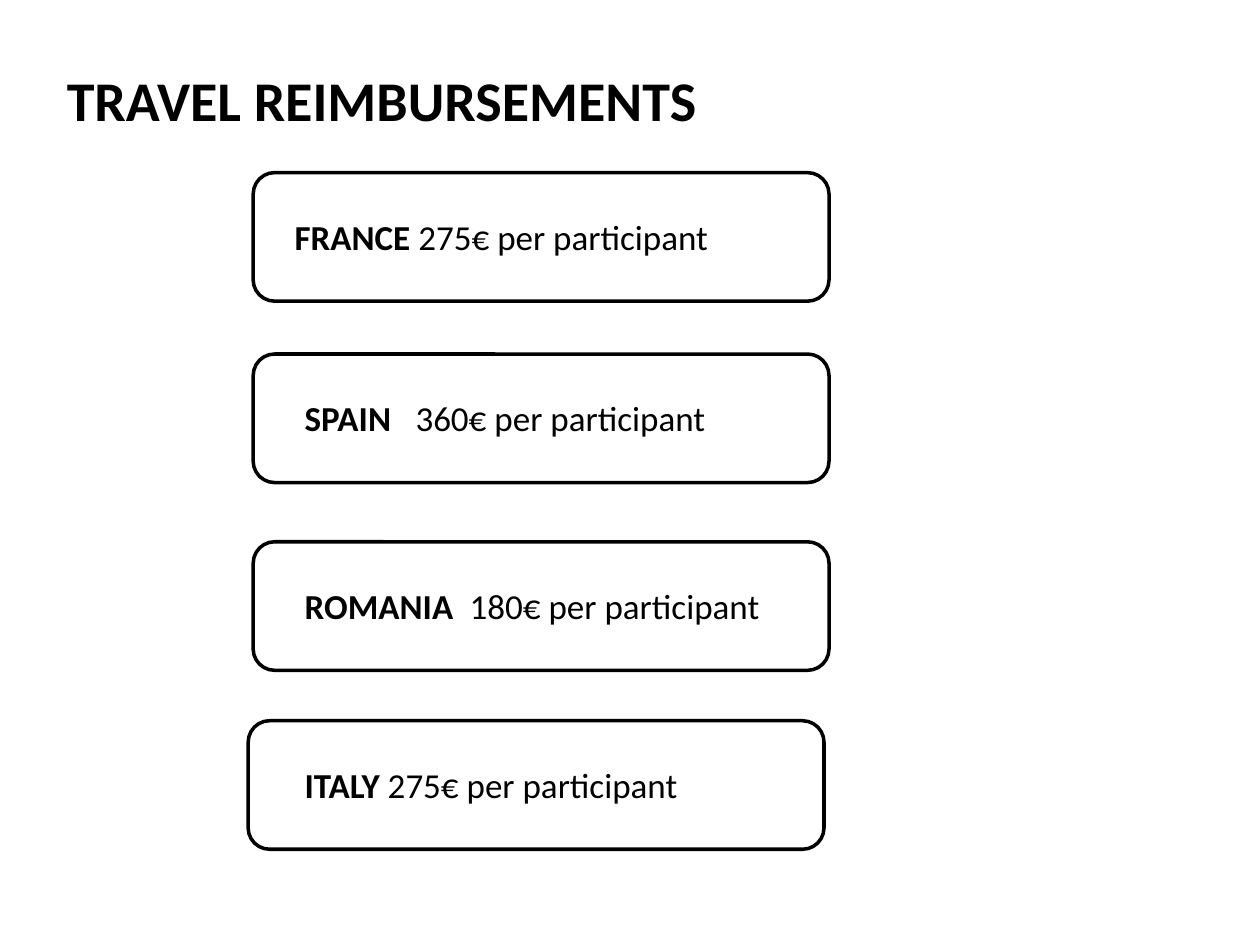
"""Build the travel reimbursements slide."""
from lxml import etree
from pptx import Presentation
from pptx.dml.color import RGBColor
from pptx.enum.shapes import MSO_SHAPE
from pptx.enum.text import MSO_ANCHOR, PP_ALIGN
from pptx.oxml.ns import qn
from pptx.util import Inches, Pt

ROUNDED = MSO_SHAPE.ROUNDED_RECTANGLE
MIDDLE = MSO_ANCHOR.MIDDLE
LEFT = PP_ALIGN.LEFT
COLORS = {"ink": "000000", "paper": "FFFFFF"}
INK = RGBColor.from_string(COLORS["ink"])
PAPER = RGBColor.from_string(COLORS["paper"])
CARD_W, CARD_H = 4.57, 1.02
TEXT_W, TEXT_H = 4, 0.44


def style(r, size, bold):
    r.font.name = "Calibri"
    r.font.size = Pt(size)
    r.font.bold = bold
    r.font.color.rgb = INK


prs = Presentation()
prs.slide_width, prs.slide_height = Inches(10), Inches(7.5)
s = prs.slides.add_slide(prs.slide_layouts[5])

title = s.shapes.title
title.left, title.top = Inches(0.43), Inches(0.44)
title.width, title.height = Inches(9.07), Inches(0.7)
tf = title.text_frame
tf.text = "TRAVEL REIMBURSEMENTS"
tf.vertical_anchor = MIDDLE
p = tf.paragraphs[0]
p.alignment = LEFT
style(p.runs[0], 32, True)

rows = [
    ("FRANCE", 275, 2.01, 1.37, 2.24, None),
    ("SPAIN", 360, 2.01, 2.81, 2.32, 0.88),
    ("ROMANIA", 180, 2.01, 4.3, 2.32, 1.31),
    ("ITALY", 275, 1.97, 5.72, 2.32, None),
]
for country, amount, card_x, card_y, text_x, tab in rows:
    sp = s.shapes.add_shape(ROUNDED, Inches(card_x), Inches(card_y), Inches(CARD_W), Inches(CARD_H))
    sp.shadow.inherit = False
    sp.fill.solid()
    sp.fill.fore_color.rgb = PAPER
    sp.line.color.rgb = INK
    sp.line.width = Pt(2)

    text_y = card_y + (CARD_H - TEXT_H) / 2
    box = s.shapes.add_textbox(Inches(text_x), Inches(text_y), Inches(TEXT_W), Inches(TEXT_H))
    tf = box.text_frame
    tf.word_wrap = True
    p = tf.paragraphs[0]
    if tab:
        stops = etree.SubElement(p._p.get_or_add_pPr(), qn("a:tabLst"))
        etree.SubElement(stops, qn("a:tab"), pos=str(Inches(tab)), algn="l")
    gap = "\t" if tab else " "
    for text, bold in ((country, True), (f"{gap}{amount}€ per participant", False)):
        r = p.add_run()
        r.text = text
        style(r, 20, bold)

prs.save("out.pptx")
